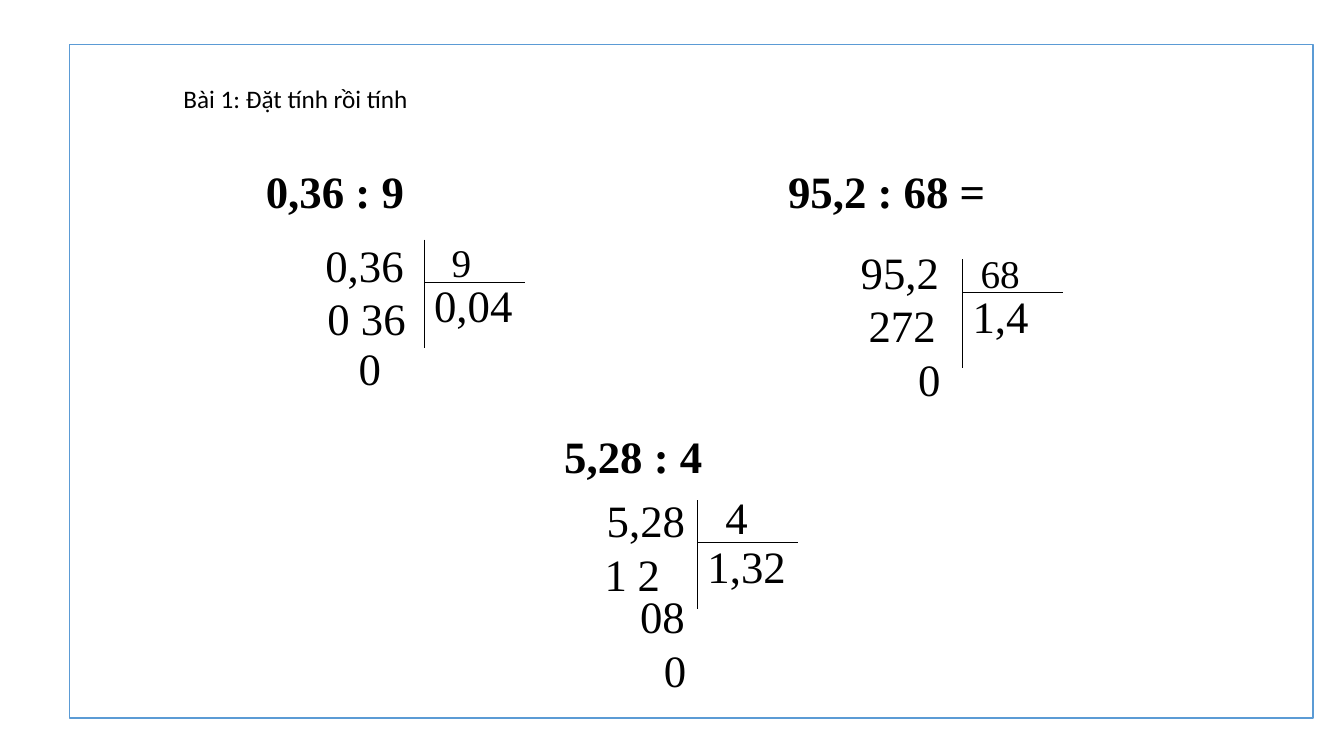
from dataclasses import dataclass
from lxml.etree import SubElement
from pptx import Presentation
from pptx.dml.color import RGBColor
from pptx.enum.shapes import MSO_CONNECTOR, MSO_SHAPE
from pptx.enum.text import MSO_ANCHOR, PP_ALIGN
from pptx.oxml.ns import qn
from pptx.util import Cm, Pt

TITLE = "Bài 1: Đặt tính rồi tính"
DIVISIONS = [
    {
        "heading": ("0,36 : 9", 6.45, 3.99),
        "corner": (10.69, 7.11),
        "rise": 1.07,
        "divisor": ("9", 11.13, 5.87, 28),
        "quotient": "0,04",
        "steps": [("0,36", 7.95, 5.87), ("0 36", 8.0, 7.19), ("0", 8.79, 8.46)],
    },
    {
        "heading": ("95,2 : 68 =", 19.61, 3.99),
        "corner": (24.26, 7.37),
        "rise": 0.84,
        "divisor": ("68", 24.46, 6.15, 28),
        "quotient": "1,4",
        "steps": [("95,2", 21.44, 6.05), ("272", 21.64, 7.37), ("0", 22.89, 8.74)],
    },
    {
        "heading": ("5,28 : 4", 13.97, 10.67),
        "corner": (17.58, 13.67),
        "rise": 1.07,
        "divisor": ("4", 18.03, 12.22, 32),
        "quotient": "1,32",
        "steps": [
            ("5,28", 15.04, 12.29),
            ("1", 14.99, 13.64),
            ("2", 15.82, 13.64),
            ("08", 15.88, 14.71),
            ("0", 16.48, 16.08),
        ],
    },
]


@dataclass(frozen=True)
class Theme:
    ink: RGBColor = RGBColor(0, 0, 0)
    paper: RGBColor = RGBColor(255, 255, 255)
    frame: RGBColor = RGBColor(0x5B, 0x9B, 0xD5)
    title_font: str = "Calibri"
    number_font: str = "Times New Roman"
    title_size: int = 18
    number_size: int = 32


THEME = Theme()
BAR_HEIGHT, BAR_WIDTH = 2.74, 2.54
QUOTIENT_RAISE = 0.23
HEADING_WIDTH = 7.19


def write(box, text, font, size, bold=False, wrap=True):
    frame = box.text_frame
    frame.word_wrap = wrap
    frame.vertical_anchor = MSO_ANCHOR.TOP
    para = frame.paragraphs[0]
    para.alignment = PP_ALIGN.LEFT
    para.line_spacing = 1.0
    para.space_before = Pt(0)
    span = para.add_run()
    span.text = text
    span.font.name = font
    span.font.size = Pt(size)
    span.font.bold = bold
    span.font.color.rgb = THEME.ink


def add_number(page, text, left, top, size=THEME.number_size):
    digits = sum(letter.isdigit() for letter in text)
    width = (0.58 * digits + 0.28 * (len(text) - digits)) * size / 32 + 0.51
    box = page.shapes.add_textbox(Cm(left), Cm(top), Cm(width), Cm(0.05 * size))
    write(box, text, THEME.number_font, size, wrap=False)


def add_bar(page, left, top, right, bottom):
    bar = page.shapes.add_connector(
        MSO_CONNECTOR.STRAIGHT, Cm(left), Cm(top), Cm(right), Cm(bottom)
    )
    bar.line.color.rgb = THEME.ink
    bar.line.width = Pt(0.75)
    SubElement(bar.element.spPr, qn("a:effectLst"))


def add_division(page, division):
    text, left, top = division["heading"]
    box = page.shapes.add_textbox(Cm(left), Cm(top), Cm(HEADING_WIDTH), Cm(1.62))
    write(box, text, THEME.number_font, THEME.number_size, bold=True)
    x, y = division["corner"]
    bar_top = y - division["rise"]
    add_bar(page, x, bar_top, x, bar_top + BAR_HEIGHT)
    add_bar(page, x, y, x + BAR_WIDTH, y)
    add_number(page, *division["divisor"])
    add_number(page, division["quotient"], x, y - QUOTIENT_RAISE)
    for step in division["steps"]:
        add_number(page, *step)


def main():
    deck = Presentation()
    deck.slide_width, deck.slide_height = Cm(33.87), Cm(19.05)
    page = deck.slides.add_slide(deck.slide_layouts[5])

    border = page.shapes.add_shape(
        MSO_SHAPE.RECTANGLE, Cm(1.75), Cm(1.12), Cm(31.34), Cm(16.97)
    )
    border.shadow.inherit = False
    border.fill.solid()
    border.fill.fore_color.rgb = THEME.paper
    border.line.color.rgb = THEME.frame
    border.line.width = Pt(1)

    title = page.shapes.title
    border.element.addnext(title.element)
    title.left, title.top, title.width, title.height = Cm(4.37), Cm(1.96), Cm(6.76), Cm(1.02)
    write(title, TITLE, THEME.title_font, THEME.title_size)

    for division in DIVISIONS:
        add_division(page, division)
    deck.save("out.pptx")


if __name__ == "__main__":
    main()
